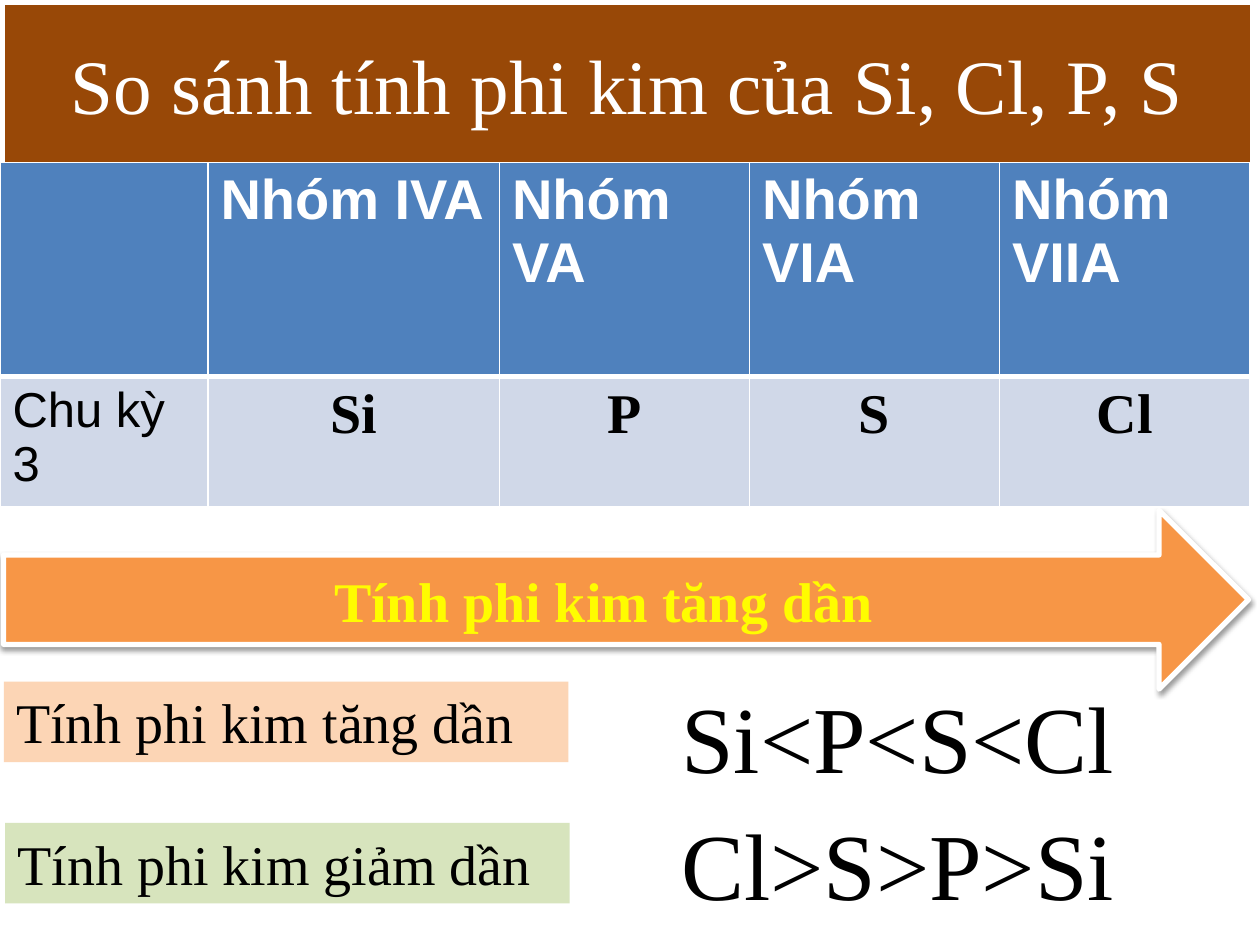
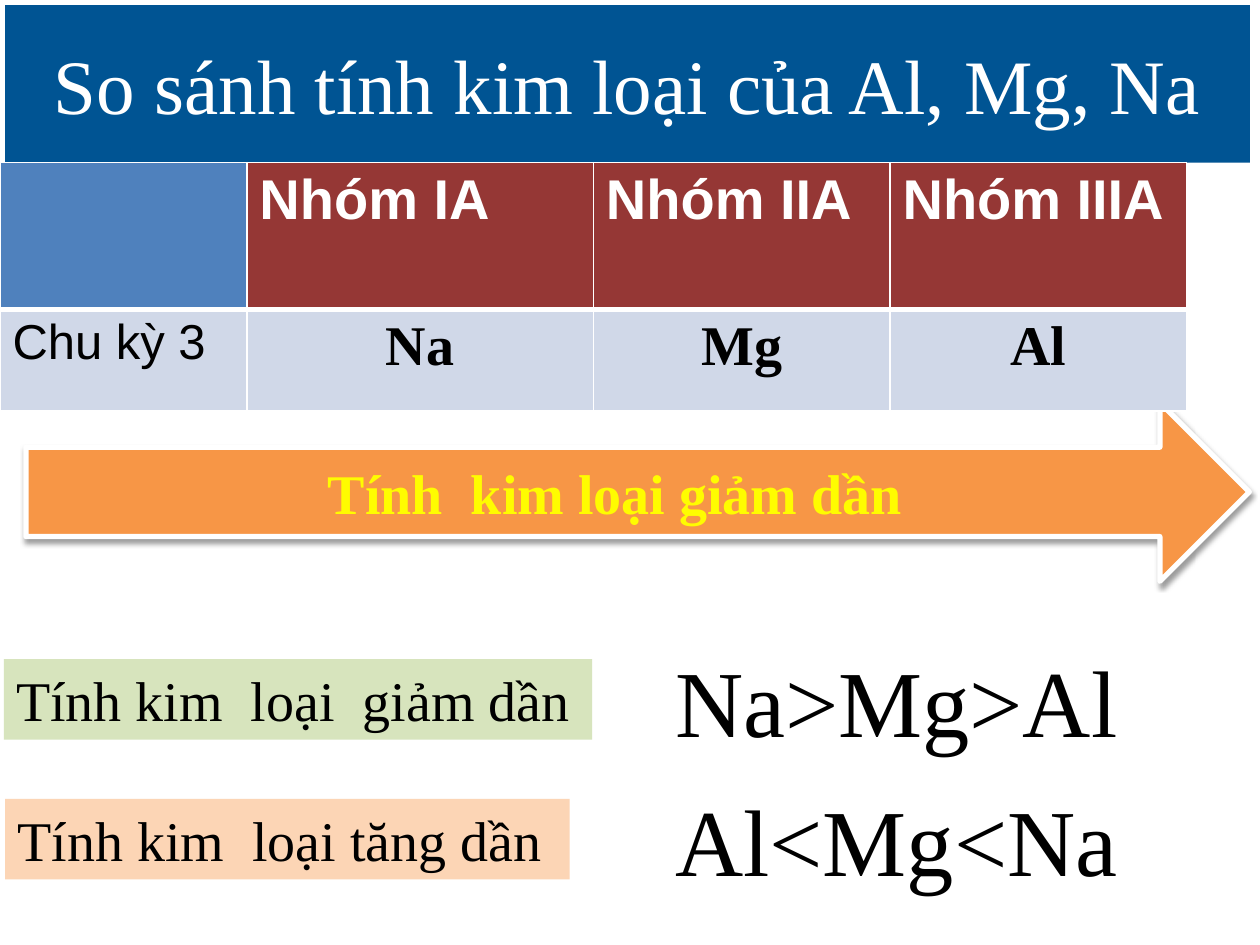
from collections import namedtuple
from dataclasses import dataclass

from lxml.etree import SubElement
from pptx import Presentation
from pptx.dml.color import RGBColor
from pptx.enum.shapes import MSO_SHAPE
from pptx.enum.text import MSO_ANCHOR, PP_ALIGN
from pptx.oxml.ns import qn
from pptx.util import Pt

Box = namedtuple("Box", "left top width height")


@dataclass(frozen=True)
class Theme:
    """Colours, fonts and type sizes of the deck."""
    white: str = "FFFFFF"
    black: str = "000000"
    brown: str = "984807"
    navy: str = "005493"
    blue: str = "4F81BD"
    red: str = "953735"
    pale: str = "D0D8E8"
    orange: str = "F79646"
    yellow: str = "FFFC00"
    peach: str = "FCD5B5"
    green: str = "D7E4BD"
    serif: str = "Times New Roman"
    sans: str = "Arial"
    title: int = 44
    body: int = 32
    small: int = 28
    large: int = 54


T = Theme()


def rgb(code):
    """Turn a hex code into a colour."""
    return RGBColor.from_string(code)


def place(box):
    """Give a box as four lengths."""
    return [Pt(value) for value in box]


def write(frame, text, size, color, font=T.serif, bold=False, align=PP_ALIGN.LEFT):
    """Write one run into the first paragraph of a frame."""
    para = frame.paragraphs[0]
    para.alignment = align
    run = para.add_run()
    run.text = text
    run.font.name = font
    run.font.size = Pt(size)
    run.font.bold = bold
    run.font.color.rgb = rgb(color)


def block(slide, kind, box, fill, anchor):
    """Add a plain filled shape without line or shadow."""
    shape = slide.shapes.add_shape(kind, *place(box))
    shape.shadow.inherit = False
    shape.fill.solid()
    shape.fill.fore_color.rgb = rgb(fill)
    shape.line.fill.background()
    shape.text_frame.word_wrap = True
    shape.text_frame.vertical_anchor = anchor
    return shape


def banner(slide, box, text, fill):
    """Add the title band."""
    shape = block(slide, MSO_SHAPE.RECTANGLE, box, fill, MSO_ANCHOR.MIDDLE)
    write(shape.text_frame, text, T.title, T.white, align=PP_ALIGN.CENTER)


def shade(shape):
    """Add a soft shadow below a shape."""
    effects = shape._element.spPr.find(qn("a:effectLst"))
    outer = SubElement(effects, qn("a:outerShdw"), blurRad=str(Pt(3.1)),
                       dist=str(Pt(1.6)), dir="5400000", rotWithShape="0")
    color = SubElement(outer, qn("a:srgbClr"), val=T.black)
    SubElement(color, qn("a:alpha"), val="38000")


def trend(slide, box, text):
    """Add the wide arrow that names the trend."""
    shape = block(slide, MSO_SHAPE.RIGHT_ARROW, box, T.orange, MSO_ANCHOR.MIDDLE)
    shape.line.color.rgb = rgb(T.white)
    shape.line.width = Pt(3)
    shade(shape)
    write(shape.text_frame, text, T.body, T.yellow, bold=True, align=PP_ALIGN.CENTER)


def edge(cell, head):
    """Draw the white borders of a cell, thick under the head row."""
    heavy = "lnB" if head else "lnT"
    for side in ("lnL", "lnR", "lnT", "lnB"):
        width = Pt(3 if side == heavy else 1)
        line = SubElement(cell._tc.get_or_add_tcPr(), qn("a:" + side), w=str(width))
        fill = SubElement(line, qn("a:solidFill"))
        SubElement(fill, qn("a:srgbClr"), val=T.white)


def grid(slide, box, widths, heights, groups, atoms, fill):
    """Add the table of groups and their elements in period 3."""
    rows = [[""] + groups, ["Chu kỳ 3"] + atoms]
    table = slide.shapes.add_table(2, len(widths), *place(box)).table
    table.horz_banding = False
    for col, width in zip(table.columns, widths):
        col.width = Pt(width)
    for r, (texts, height) in enumerate(zip(rows, heights)):
        table.rows[r].height = Pt(height)
        for c, text in enumerate(texts):
            cell = table.cell(r, c)
            head = r == 0
            edge(cell, head)
            cell.fill.solid()
            cell.fill.fore_color.rgb = rgb(T.pale if r else fill if c else T.blue)
            if head and text:
                write(cell.text_frame, text, T.body, T.white, T.sans, True)
            elif c:
                write(cell.text_frame, text, T.body, T.black, bold=True,
                      align=PP_ALIGN.CENTER)
            elif text:
                write(cell.text_frame, text, T.small, T.black, T.sans)


def answer(slide, box, label, fill, order, drop=13, wide=322.6, span=264.2):
    """Add a label at the left of a box and the order at its right."""
    tag = Box(box.left, box.top + drop, wide, 46.1)
    shape = block(slide, MSO_SHAPE.RECTANGLE, tag, fill, MSO_ANCHOR.TOP)
    write(shape.text_frame, label, T.body, T.black)
    spot = Box(box.left + box.width - span, box.top, span, box.height)
    frame = slide.shapes.add_textbox(*place(spot)).text_frame
    frame.word_wrap = False
    write(frame, order, T.large, T.black)


def start(deck, text, fill):
    """Add a blank slide with its title band."""
    slide = deck.slides.add_slide(deck.slide_layouts[6])
    banner(slide, Box(2.9, 2.9, 711.4, 90), text, fill)
    return slide


def nonmetal(deck):
    """Build the slide that compares nonmetals."""
    slide = start(deck, "So sánh tính phi kim của Si, Cl, P, S", T.brown)
    trend(slide, Box(2, 291.6, 711.4, 102.2), "Tính phi kim tăng dần")
    answer(slide, Box(2.2, 384.5, 644.3, 72.7), "Tính phi kim tăng dần",
           T.peach, "Si<P<S<Cl", drop=5)
    answer(slide, Box(2.9, 457.2, 643.6, 72.7), "Tính phi kim giảm dần",
           T.green, "Cl>S>P>Si")
    grid(slide, Box(0, 92.9, 714, 196.4), [118.8, 166.6] + [142.9] * 3, [122.4, 74],
         ["Nhóm IVA", "Nhóm VA", "Nhóm VIA", "Nhóm VIIA"],
         ["Si", "P", "S", "Cl"], T.blue)


def metal(deck):
    """Build the slide that compares metals."""
    slide = start(deck, "So sánh tính kim loại của Al, Mg, Na", T.navy)
    trend(slide, Box(14.8, 230, 699.1, 102.2), "Tính  kim loại giảm dần")
    answer(slide, Box(2.2, 363.6, 646.5, 72.7), "Tính kim  loại  giảm dần",
           T.green, "Na>Mg>Al", wide=336.2, span=270)
    answer(slide, Box(2.9, 443.5, 645.8, 72.7), "Tính kim  loại tăng dần",
           T.peach, "Al<Mg<Na", span=270)
    grid(slide, Box(0, 92.9, 678, 141.9), [141.1, 198] + [169.5] * 2, [83.9, 58],
         ["Nhóm IA", "Nhóm IIA", "Nhóm IIIA"], ["Na", "Mg", "Al"], T.red)


def main():
    """Build and save the deck."""
    deck = Presentation()
    deck.slide_width, deck.slide_height = Pt(720), Pt(540)
    nonmetal(deck)
    metal(deck)
    deck.save("out.pptx")


if __name__ == "__main__":
    main()
